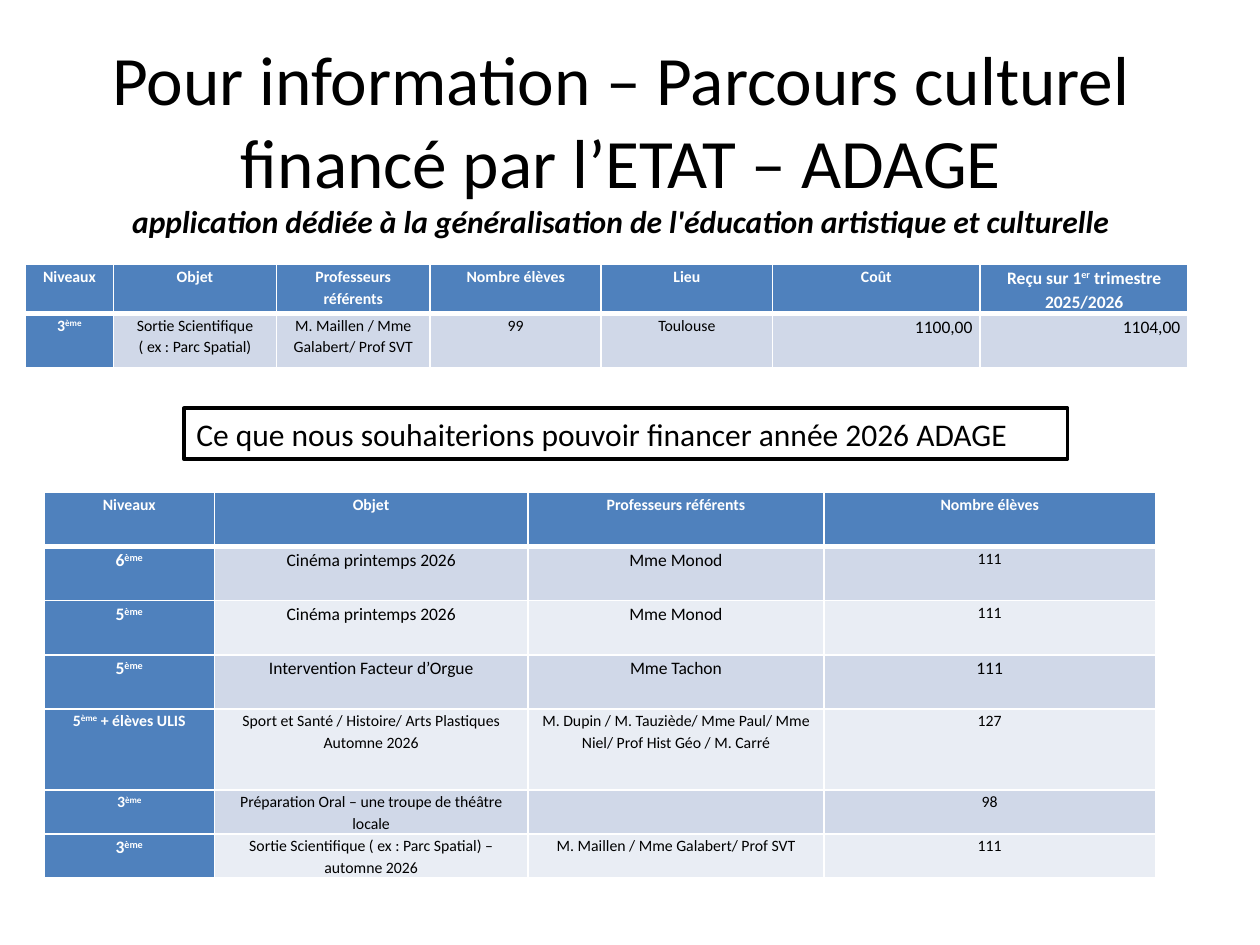
from lxml.etree import SubElement
from pptx import Presentation
from pptx.dml.color import RGBColor
from pptx.enum.shapes import MSO_SHAPE
from pptx.enum.text import MSO_ANCHOR, MSO_AUTO_SIZE, PP_ALIGN
from pptx.oxml.ns import qn
from pptx.util import Cm, Pt

FONT = "Calibri"
COLORS = {
    "header": "4F81BD",
    "odd_row": "D0D8E8",
    "even_row": "E9EDF4",
    "white": "FFFFFF",
    "black": "000000",
}

# ^...^ marks a superscript; a (text, size) pair replaces the usual 9 points.
FUNDED_ROWS = [
    ["Niveaux", "Objet", "Professeurs référents", "Nombre élèves", "Lieu", "Coût",
     ("Reçu sur 1^er^ trimestre 2025/2026", 10)],
    ["3^ème^", "Sortie Scientifique ( ex : Parc Spatial)",
     "M. Maillen / Mme Galabert/ Prof SVT", "99", "Toulouse",
     ("1100,00", 10), ("1104,00", 10)],
]
WISHED_ROWS = [
    ["Niveaux", "Objet", "Professeurs référents", "Nombre élèves"],
    [("6^ème^", 10), ("Cinéma printemps 2026", 10), ("Mme Monod", 10), "111"],
    [("5^ème^", 10), ("Cinéma printemps 2026", 10), ("Mme Monod", 10), "111"],
    [("5^ème^", 10), ("Intervention Facteur d’Orgue", 10), ("Mme Tachon", 10), ("111", 10)],
    ["5^ème^ + élèves ULIS", "Sport et Santé / Histoire/ Arts Plastiques\nAutomne 2026",
     "M. Dupin / M. Tauziède/ Mme Paul/ Mme Niel/ Prof Hist Géo / M. Carré", "127"],
    ["3^ème^", "Préparation Oral – une troupe de théâtre locale", "", "98"],
    [("3^ème^", 10), "Sortie Scientifique ( ex : Parc Spatial) – automne 2026",
     "M. Maillen / Mme Galabert/ Prof SVT", "111"],
]


def rgb(name):
    return RGBColor.from_string(COLORS[name])


def format_span(span, size, color="black", bold=False, italic=False):
    span.font.name = FONT
    span.font.size = Pt(size)
    span.font.bold = bold
    span.font.italic = italic
    span.font.color.rgb = rgb(color)


def set_borders(cell, top, bottom):
    """Draw white cell borders; top and bottom are widths in points."""
    properties = cell._tc.get_or_add_tcPr()
    for tag, width in (("lnL", 1), ("lnR", 1), ("lnT", top), ("lnB", bottom)):
        line = SubElement(properties, qn(f"a:{tag}"), w=str(Pt(width)))
        fill = SubElement(line, qn("a:solidFill"))
        SubElement(fill, qn("a:srgbClr"), val=COLORS["white"])


def fill_cell(cell, entry, strong, align):
    text, size = entry if isinstance(entry, tuple) else (entry, 9)
    cell.margin_left = cell.margin_right = Cm(0.16)
    cell.margin_top = cell.margin_bottom = 0
    cell.text = text
    for para, line in zip(cell.text_frame.paragraphs, text.split("\n")):
        para.text = ""
        para.alignment = align
        para.line_spacing = 1.15
        for index, part in enumerate(line.split("^")):
            if part:
                span = para.add_run()
                span.text = part
                format_span(span, size, "white" if strong else "black", bold=strong)
                if index % 2:
                    span.font._element.set("baseline", "30000")


def add_grid(page, left, top, widths, heights, rows, right_columns=()):
    """Add a table with a strong first row and first column; sizes in cm."""
    frame = page.shapes.add_table(len(rows), len(widths), Cm(left), Cm(top),
                                  Cm(sum(widths)), Cm(sum(heights)))
    table = frame.table
    table.first_col = True
    for column, width in zip(table.columns, widths):
        column.width = Cm(width)
    for row, height in zip(table.rows, heights):
        row.height = Cm(height)
    for r, entries in enumerate(rows):
        for c, entry in enumerate(entries):
            cell = table.cell(r, c)
            strong = r == 0 or c == 0
            to_right = r > 0 and c in right_columns
            fill_cell(cell, entry, strong, PP_ALIGN.RIGHT if to_right else PP_ALIGN.CENTER)
            set_borders(cell, top=3 if r == 1 else 1, bottom=3 if r == 0 else 1)
            band = "odd_row" if r % 2 else "even_row"
            cell.fill.solid()
            cell.fill.fore_color.rgb = rgb("header" if strong else band)


def place_title(page, left, top, width, height):
    title = page.shapes.title
    title.left, title.top, title.width, title.height = map(Cm, (left, top, width, height))
    frame = title.text_frame
    frame.text = ("Pour information – Parcours culturel financé par l’ETAT – ADAGE\n"
                  "application dédiée à la généralisation de l'éducation artistique et culturelle")
    frame.auto_size = MSO_AUTO_SIZE.NONE
    frame.vertical_anchor = MSO_ANCHOR.TOP
    frame.margin_top = 0
    heading, subtitle = frame.paragraphs
    for para in (heading, subtitle):
        para.alignment = PP_ALIGN.CENTER
    format_span(heading.runs[0], 39.6)
    format_span(subtitle.runs[0], 18, bold=True, italic=True)


def add_banner(page, left, top, width, height):
    box = page.shapes.add_shape(MSO_SHAPE.RECTANGLE, *map(Cm, (left, top, width, height)))
    box.shadow.inherit = False
    box.fill.solid()
    box.fill.fore_color.rgb = rgb("white")
    box.line.color.rgb = rgb("black")
    box.line.width = Pt(2)
    frame = box.text_frame
    frame.text = "Ce que nous souhaiterions pouvoir financer année 2026 ADAGE"
    frame.word_wrap = True
    frame.auto_size = MSO_AUTO_SIZE.SHAPE_TO_FIT_TEXT
    para = frame.paragraphs[0]
    para.alignment = PP_ALIGN.LEFT
    format_span(para.runs[0], 18)


def main():
    deck = Presentation()
    deck.slide_width, deck.slide_height = Cm(25.4), Cm(19.05)
    page = deck.slides.add_slide(deck.slide_layouts[5])
    place_title(page, 1.09, 0.72, 22.86, 5.59)
    add_grid(page, 0.51, 5.33, [1.78, 3.28, 3.1, 3.45, 3.45, 4.19, 4.19],
             [0.94, 1.09], FUNDED_ROWS, right_columns=(5, 6))
    add_banner(page, 3.71, 8.23, 17.81, 1.03)
    add_grid(page, 0.89, 9.93, [3.43, 6.32, 5.97, 6.68],
             [1.09] * 4 + [1.64] + [0.88] * 2, WISHED_ROWS)
    deck.save("out.pptx")


if __name__ == "__main__":
    main()
